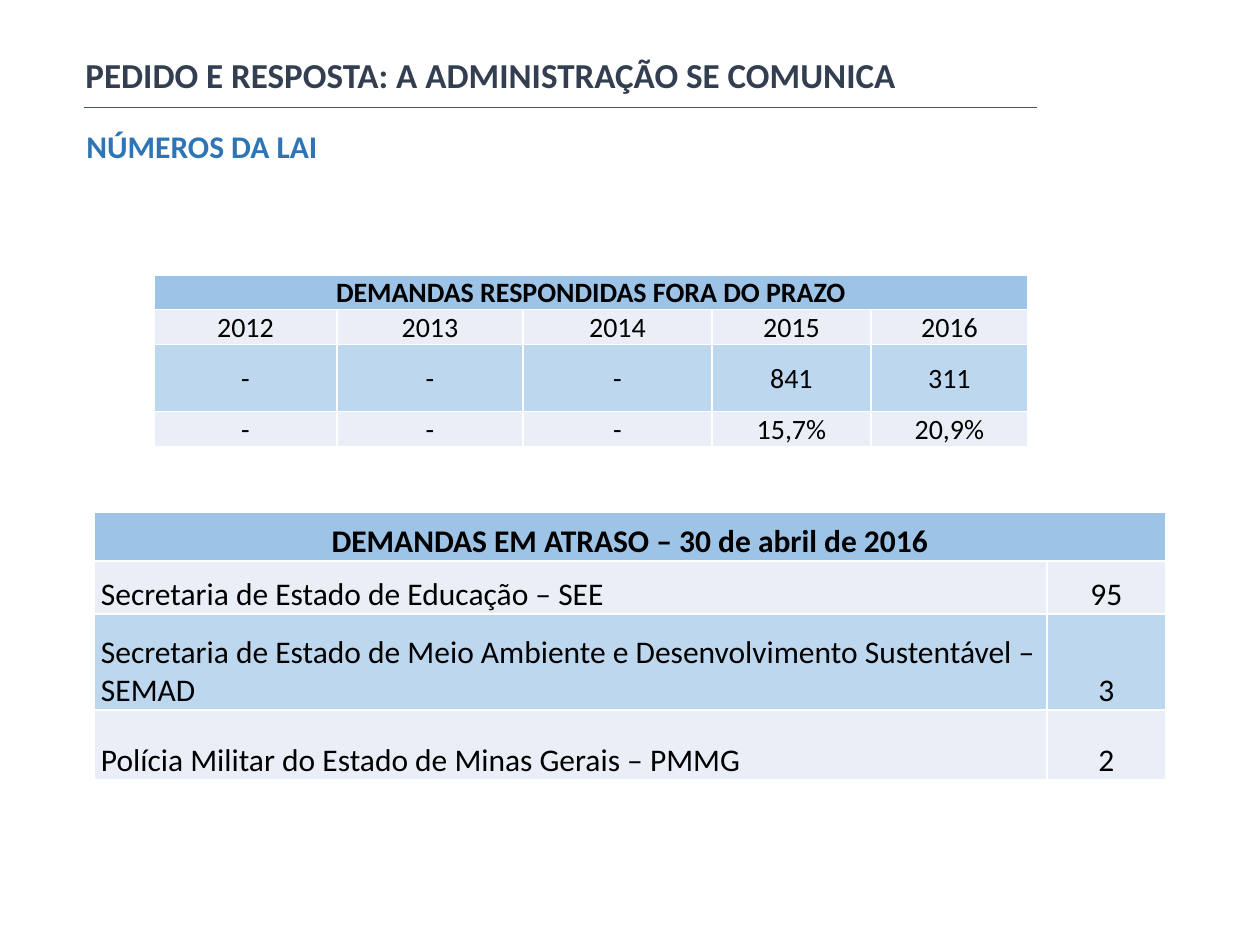
import pptx
import pptx.dml.color
import pptx.enum.shapes
import pptx.enum.text
import pptx.oxml
import pptx.oxml.ns
import pptx.util

ALIGN = pptx.enum.text.PP_ALIGN
ANCHOR = pptx.enum.text.MSO_ANCHOR

HEADINGS = [
    ("PEDIDO E RESPOSTA: A ADMINISTRAÇÃO SE COMUNICA", (73, 47, 843, 55), "title"),
    ("NÚMEROS DA LAI", (74, 121, 258, 50), "subtitle"),
]
RULE = (84, 107, 1037, 107)
TABLES = [
    {
        "at": (94, 512),
        "cols": [953, 119],
        "rows": [49, 53, 96, 70],
        "title": "DEMANDAS EM ATRASO – 30 de abril de 2016",
        "body": [
            ["Secretaria de Estado de Educação – SEE", "95"],
            ["Secretaria de Estado de Meio Ambiente e Desenvolvimento Sustentável –\nSEMAD", "3"],
            ["Polícia Militar do Estado de Minas Gerais – PMMG", "2"],
        ],
        "size": "overdue",
        "anchor": ANCHOR.BOTTOM,
        "label_column": True,
    },
    {
        "at": (154, 275),
        "cols": [183, 186, 189, 159, 157],
        "rows": [34, 35, 67, 35],
        "title": "DEMANDAS RESPONDIDAS FORA DO PRAZO",
        "body": [
            ["2012", "2013", "2014", "2015", "2016"],
            ["-", "-", "-", "841", "311"],
            ["-", "-", "-", "15,7%", "20,9%"],
        ],
        "size": "late",
        "anchor": ANCHOR.MIDDLE,
        "label_column": False,
    },
]
THEME = {
    "font": "Calibri",
    "sizes": {"title": 20, "subtitle": 18, "overdue": 18, "late": 16},
    "colors": {
        "title": "333F50", "subtitle": "2E75B6", "rule": "44546A", "text": "000000",
        "header": "9DC3E6", "light": "EAEFF7", "mid": "BDD7EE", "border": "FFFFFF",
    },
}


def px(n):
    return pptx.util.Emu(round(n * 914400 / 126))


def color(name):
    return pptx.dml.color.RGBColor.from_string(THEME["colors"][name])


def style(p, size, color_name, bold):
    p.font.name = THEME["font"]
    p.font.size = pptx.util.Pt(THEME["sizes"][size])
    p.font.bold = bold
    p.font.color.rgb = color(color_name)


def add_heading(slide, text, box, role):
    tf = slide.shapes.add_textbox(*map(px, box)).text_frame
    tf.word_wrap = False
    tf.auto_size = pptx.enum.text.MSO_AUTO_SIZE.SHAPE_TO_FIT_TEXT
    tf.text = text
    style(tf.paragraphs[0], role, role, True)


def add_rule(slide):
    line = slide.shapes.add_connector(
        pptx.enum.shapes.MSO_CONNECTOR.STRAIGHT, *map(px, RULE))
    line.line.color.rgb = color("rule")
    line.line.width = pptx.util.Pt(0.5)
    line._element.spPr.append(pptx.oxml.parse_xml(
        f'<a:effectLst {pptx.oxml.ns.nsdecls("a")}/>'))


def add_borders(cell):
    tc_pr = cell._tc.get_or_add_tcPr()
    for side in "LRTB":
        tc_pr.append(pptx.oxml.parse_xml(
            f'<a:ln{side} {pptx.oxml.ns.nsdecls("a")} w="12700"><a:solidFill>'
            f'<a:srgbClr val="{THEME["colors"]["border"]}"/></a:solidFill></a:ln{side}>'))


def fill_cell(cell, text, data, row, is_label):
    add_borders(cell)
    cell.fill.solid()
    cell.fill.fore_color.rgb = color("header" if row == 0 else "light" if row % 2 else "mid")
    cell.margin_left = px(7 if is_label else 1)
    cell.margin_right = cell.margin_top = px(1)
    cell.margin_bottom = 0
    cell.vertical_anchor = data["anchor"]
    cell.text_frame.text = text
    for p in cell.text_frame.paragraphs:
        p.alignment = ALIGN.LEFT if is_label else ALIGN.CENTER
        style(p, data["size"], "text", row == 0)


def add_table(slide, data):
    cols, rows = data["cols"], data["rows"]
    box = (*data["at"], sum(cols), sum(rows))
    table = slide.shapes.add_table(len(rows), len(cols), *map(px, box)).table
    for column, width in zip(table.columns, cols):
        column.width = px(width)
    for row, height in zip(table.rows, rows):
        row.height = px(height)
    table.cell(0, 0).merge(table.cell(0, len(cols) - 1))
    for r, texts in enumerate([[data["title"]], *data["body"]]):
        for c, text in enumerate(texts):
            is_label = data["label_column"] and r > 0 and c == 0
            fill_cell(table.cell(r, c), text, data, r, is_label)


def main():
    prs = pptx.Presentation()
    prs.slide_width, prs.slide_height = px(1260), px(945)
    slide = prs.slides.add_slide(prs.slide_layouts[6])
    for heading in HEADINGS:
        add_heading(slide, *heading)
    add_rule(slide)
    for data in TABLES:
        add_table(slide, data)
    prs.save("out.pptx")


if __name__ == "__main__":
    main()
